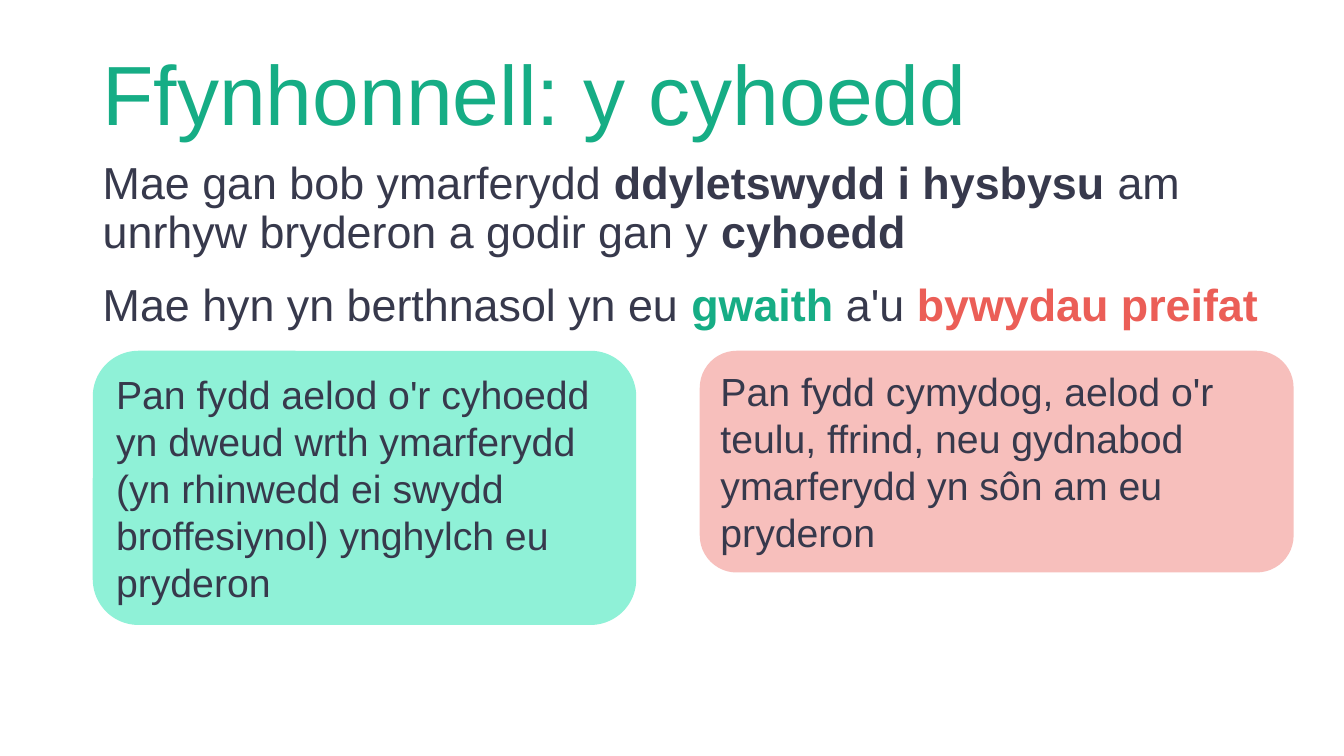
from dataclasses import dataclass

from pptx import Presentation
from pptx import util as u
from pptx.dml.color import RGBColor
from pptx.enum import shapes, text


@dataclass(frozen=True)
class Theme:
    font: str = "Arial"
    ink: str = "37394C"
    green: str = "16AD85"
    red: str = "EB5E57"
    pale_green: str = "8FF1D7"
    pale_red: str = "F7BFBC"
    title_size: int = 60
    body_size: int = 32
    card_size: int = 28


THEME = Theme()
LEFT = 0.92
CARD_TOP = 3.48


def write_text(frame, paragraphs, size, anchor=text.MSO_ANCHOR.TOP,
               line_spacing=1.0, space_after=0):
    """Write paragraphs, each a list of (wording, colour, bold) pieces."""
    frame.word_wrap = True
    frame.vertical_anchor = anchor
    for index, pieces in enumerate(paragraphs):
        paragraph = frame.add_paragraph() if index else frame.paragraphs[0]
        paragraph.alignment = text.PP_ALIGN.LEFT
        paragraph.line_spacing = line_spacing
        paragraph.space_after = u.Pt(space_after)
        for wording, colour, bold in pieces:
            for number, line in enumerate(wording.split("\n")):
                if number:
                    paragraph.add_line_break()
                run = paragraph.add_run()
                run.text = line
                run.font.name = THEME.font
                run.font.size = u.Pt(size)
                run.font.bold = bold
                run.font.color.rgb = RGBColor.from_string(colour)


def add_text_box(slide, box, paragraphs, size, **text_format):
    shape = slide.shapes.add_textbox(*map(u.Inches, box))
    write_text(shape.text_frame, paragraphs, size, line_spacing=0.9, **text_format)


def add_title(slide, box):
    add_text_box(slide, box, [[("Ffynhonnell: y cyhoedd", THEME.green, False)]],
                 THEME.title_size, anchor=text.MSO_ANCHOR.BOTTOM)


def add_duty_statement(slide, box):
    paragraphs = [
        [("Mae gan bob ymarferydd ", THEME.ink, False),
         ("ddyletswydd i hysbysu", THEME.ink, True),
         (" am unrhyw bryderon a godir gan y ", THEME.ink, False),
         ("cyhoedd", THEME.ink, True)],
        [("Mae hyn yn berthnasol yn eu ", THEME.ink, False),
         ("gwaith ", THEME.green, True),
         ("a'u ", THEME.ink, False),
         ("bywydau preifat", THEME.red, True)],
    ]
    add_text_box(slide, box, paragraphs, THEME.body_size, space_after=18)


def add_card(slide, box, wording, fill):
    card = slide.shapes.add_shape(shapes.MSO_SHAPE.ROUNDED_RECTANGLE,
                                  *map(u.Inches, box))
    card.shadow.inherit = False
    card.fill.solid()
    card.fill.fore_color.rgb = RGBColor.from_string(fill)
    card.line.fill.background()
    write_text(card.text_frame, [[(wording, THEME.ink, False)]], THEME.card_size,
               anchor=text.MSO_ANCHOR.MIDDLE)
    card.text_frame.auto_size = text.MSO_AUTO_SIZE.SHAPE_TO_FIT_TEXT


def main():
    presentation = Presentation()
    presentation.slide_width = u.Inches(13.33)
    presentation.slide_height = u.Inches(7.5)
    slide = presentation.slides.add_slide(presentation.slide_layouts[6])

    add_title(slide, (LEFT, 0.02, 11.5, 1.45))
    add_duty_statement(slide, (LEFT, 1.55, 11.92, 2.2))
    add_card(slide, (LEFT, CARD_TOP, 5.39, 2.72),
             "Pan fydd aelod o'r cyhoedd yn dweud wrth ymarferydd \n"
             "(yn rhinwedd ei swydd broffesiynol) ynghylch eu pryderon",
             THEME.pale_green)
    add_card(slide, (6.94, CARD_TOP, 5.89, 2.2),
             "Pan fydd cymydog, aelod o'r teulu, ffrind, neu gydnabod "
             "ymarferydd yn sôn am eu pryderon",
             THEME.pale_red)
    presentation.save("out.pptx")


if __name__ == "__main__":
    main()
